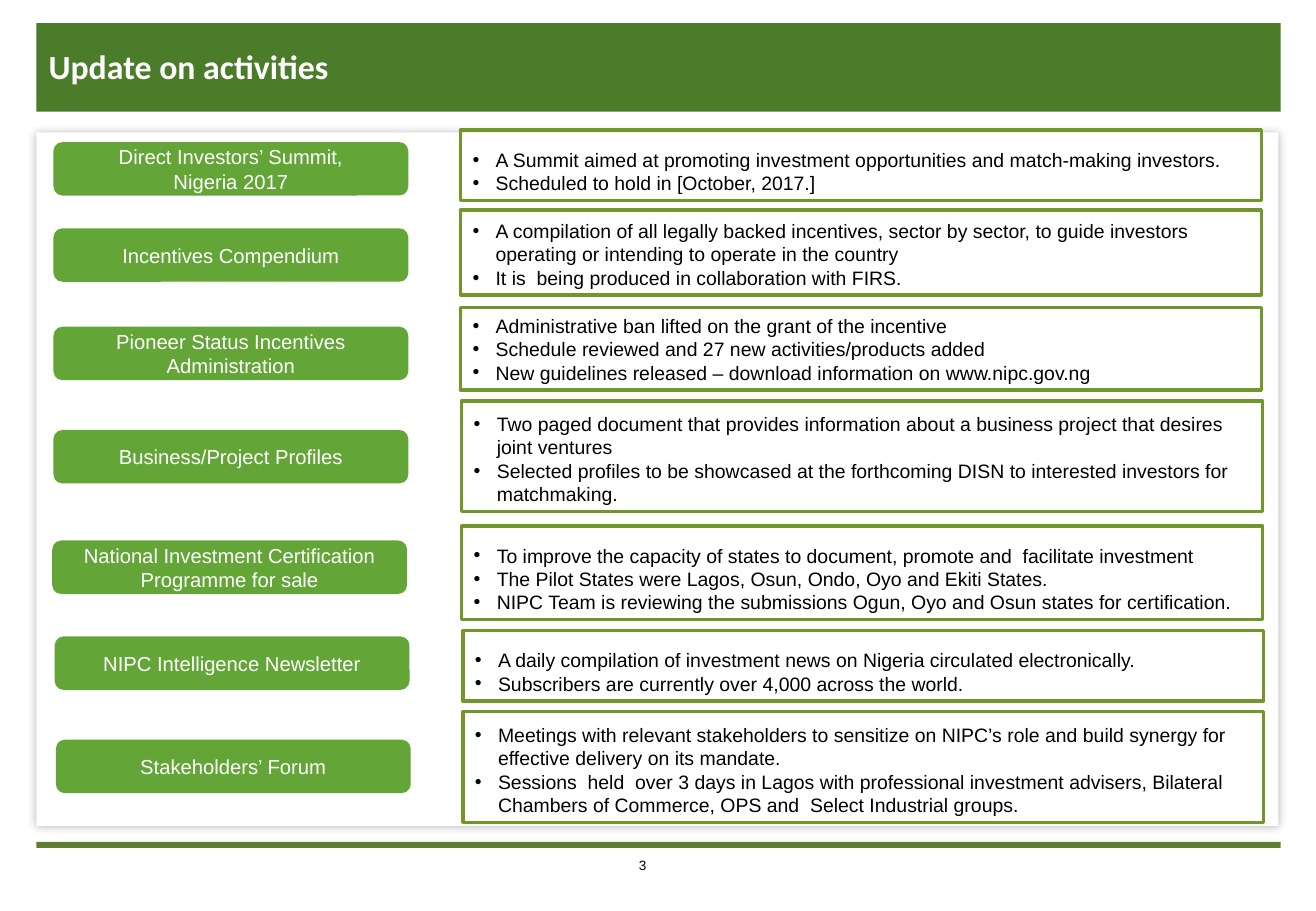
from lxml import etree
from pptx import Presentation
from pptx.dml.color import RGBColor
from pptx.enum.shapes import MSO_SHAPE
from pptx.enum.text import MSO_ANCHOR, PP_ALIGN
from pptx.oxml import parse_xml
from pptx.oxml.ns import nsdecls, qn
from pptx.util import Inches, Pt

RECT, ROUNDED = MSO_SHAPE.RECTANGLE, MSO_SHAPE.ROUNDED_RECTANGLE
MIDDLE, BOTTOM = MSO_ANCHOR.MIDDLE, MSO_ANCHOR.BOTTOM
LEFT, CENTER = PP_ALIGN.LEFT, PP_ALIGN.CENTER
HANGING = Inches(0.19)


def add_panel(kind, left, top, width, height, fill=None, outline=None):
    panel = slide.shapes.add_shape(
        kind, Inches(left), Inches(top), Inches(width), Inches(height))
    panel.shadow.inherit = False
    if fill:
        panel.fill.solid()
        panel.fill.fore_color.rgb = RGBColor.from_string(fill)
    else:
        panel.fill.background()
    if outline:
        panel.line.color.rgb = RGBColor.from_string(outline)
        panel.line.width = Pt(2)
    else:
        panel.line.fill.background()
    return panel


def write(shape, lines, size, color, align, anchor, font="Arial", bold=False, bullet=False):
    frame = shape.text_frame
    frame.word_wrap = True
    frame.vertical_anchor = anchor
    frame.text = "\n".join(lines)
    for paragraph in frame.paragraphs:
        paragraph.alignment = align
        if bullet:
            properties = paragraph._p.get_or_add_pPr()
            properties.set("marL", str(HANGING))
            properties.set("indent", str(-HANGING))
            etree.SubElement(properties, qn("a:buFont")).set("typeface", "Arial")
            etree.SubElement(properties, qn("a:buChar")).set("char", "•")
        for run in paragraph.runs:
            run.font.name = font
            run.font.size = Pt(size)
            run.font.bold = bold
            run.font.color.rgb = RGBColor.from_string(color)


activities = [
    (0.44, 1.17, ["Direct Investors’ Summit,", "Nigeria 2017"], 3.79, 1.07, 0.58, [
        "A Summit aimed at promoting investment opportunities and match-making investors.",
        "Scheduled to hold in [October, 2017.]"]),
    (0.44, 1.88, ["Incentives Compendium"], 3.79, 1.73, 0.7, [
        "A compilation of all legally backed incentives, sector by sector, to guide investors "
        "operating or intending to operate in the country",
        "It is  being produced in collaboration with FIRS."]),
    (0.44, 2.69, ["Pioneer Status Incentives Administration"], 3.79, 2.53, 0.68, [
        "Administrative ban lifted on the grant of the incentive",
        "Schedule reviewed and 27 new activities/products added",
        "New guidelines released – download information on www.nipc.gov.ng"]),
    (0.44, 3.54, ["Business/Project Profiles"], 3.8, 3.3, 0.91, [
        "Two paged document that provides information about a business project that desires  "
        "joint ventures",
        "Selected profiles to be showcased at the forthcoming DISN to interested investors "
        "for matchmaking."]),
    (0.43, 4.45, ["National Investment Certification Programme for sale"], 3.8, 4.33, 0.77, [
        "To improve the capacity of states to document, promote and  facilitate investment",
        "The Pilot States were Lagos, Osun, Ondo, Oyo and Ekiti States.",
        "NIPC Team is reviewing the submissions Ogun, Oyo and Osun states for certification."]),
    (0.45, 5.24, ["NIPC Intelligence Newsletter"], 3.81, 5.19, 0.58, [
        "A daily compilation of investment news on Nigeria circulated electronically.",
        "Subscribers are currently over 4,000 across the world."]),
    (0.46, 6.09, ["Stakeholders’ Forum"], 3.81, 5.86, 0.91, [
        "Meetings with relevant stakeholders to sensitize on NIPC’s role and build synergy for "
        "effective delivery on its mandate.",
        "Sessions  held  over 3 days in Lagos with professional investment advisers, Bilateral "
        "Chambers of Commerce, OPS and  Select Industrial groups."]),
]

prs = Presentation()
prs.slide_width, prs.slide_height = Inches(10.83), Inches(7.5)
slide = prs.slides.add_slide(prs.slide_layouts[5])

add_panel(RECT, 0.3, 6.93, 10.24, 0.05, "617D32")
add_panel(RECT, 0.3, 0.19, 10.24, 0.73, "4A7C29")
card = add_panel(RECT, 0.3, 1.09, 10.22, 5.71, "FFFFFF")
card_effects = card._element.spPr.find(qn("a:effectLst"))
card_effects.append(parse_xml(
    f'<a:outerShdw {nsdecls("a")} blurRad="{Pt(5)}" dist="{Pt(1)}" dir="5400000" '
    'algn="t" rotWithShape="0"><a:srgbClr val="404040"><a:alpha val="40000"/>'
    '</a:srgbClr></a:outerShdw>'))

page_number = slide.shapes.add_textbox(Inches(5.16), Inches(7.01), Inches(0.34), Inches(0.24))
write(page_number, ["3"], 8, "000000", LEFT, MSO_ANCHOR.TOP)

title = slide.shapes.title
title.left, title.top = Inches(0.3), Inches(0.24)
title.width, title.height = Inches(9.34), Inches(0.61)
write(title, ["Update on activities"], 20, "FFFFFF", LEFT, MIDDLE, "Calibri", True)
title._element.getparent().append(title._element)

for label_left, label_top, name, box_left, box_top, box_height, details in activities:
    detail_box = add_panel(RECT, box_left, box_top, 6.59, box_height, outline="719629")
    write(detail_box, details, 11.5, "000000", LEFT, BOTTOM, bullet=True)
    label = add_panel(ROUNDED, label_left, label_top, 2.92, 0.44, "63A537")
    write(label, name, 12, "FFFFFF", CENTER, MIDDLE)

prs.save("out.pptx")
